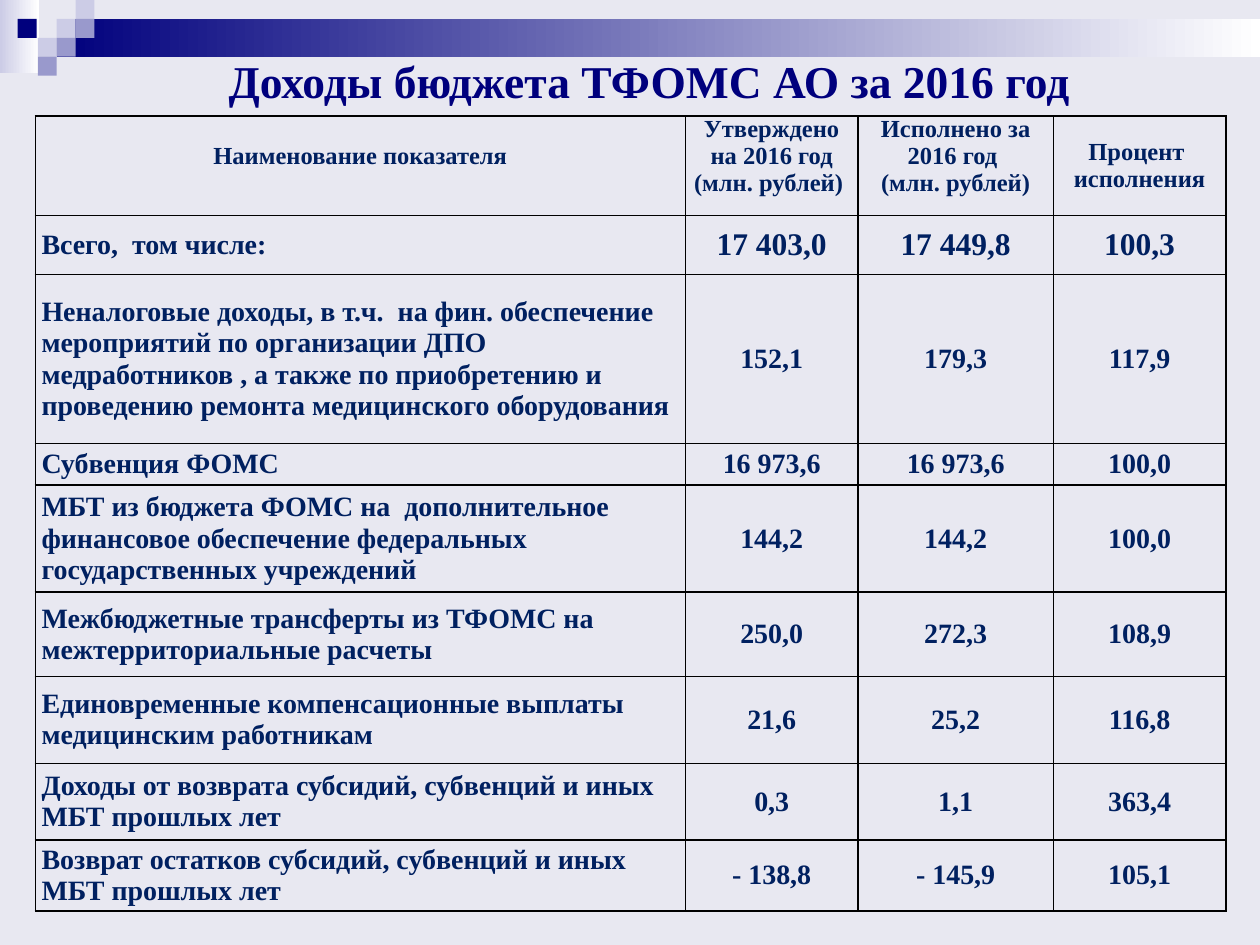
from lxml import etree
from pptx import Presentation
from pptx.dml.color import RGBColor
from pptx.enum.shapes import MSO_SHAPE
from pptx.enum.text import MSO_ANCHOR, PP_ALIGN
from pptx.oxml.ns import qn
from pptx.util import Inches, Pt

RECTANGLE = MSO_SHAPE.RECTANGLE
LEFT, CENTER = PP_ALIGN.LEFT, PP_ALIGN.CENTER
TOP, MIDDLE = MSO_ANCHOR.TOP, MSO_ANCHOR.MIDDLE

BACKGROUND = RGBColor(0xE8, 0xE8, 0xF1)
NAVY = RGBColor(0x00, 0x00, 0x7D)
LAVENDER = RGBColor(0xCC, 0xCC, 0xE6)
VIOLET = RGBColor(0x99, 0x99, 0xCC)
WHITE = RGBColor(0xFF, 0xFF, 0xFF)
TABLE_TEXT = RGBColor(0x00, 0x20, 0x60)
FONT = "Times New Roman"

SQUARE = 0.15
SQUARES = [
    (0.45, 0.15, LAVENDER), (0.6, 0, LAVENDER), (0.6, 0.15, VIOLET),
    (0.3, 0.3, LAVENDER), (0.14, 0.15, NAVY), (0.45, 0.3, VIOLET),
    (0.3, 0.45, VIOLET),
]

COLUMN_WIDTHS = [5.16, 1.37, 1.55, 1.37]
ROW_HEIGHTS = [0.79, 0.47, 1.34, 0.33, 0.85, 0.67, 0.69, 0.61, 0.56]
# Each header: its lines, vertical anchor and top margin
HEADERS = [
    (["Наименование показателя"], TOP, 0.21),
    (["Утверждено", "на 2016 год", "(млн. рублей) "], TOP, 0),
    (["Исполнено за 2016 год ", "(млн. рублей)"], TOP, 0),
    (["Процент ", "исполнения"], MIDDLE, 0),
]
INCOME_ROWS = [
    ("Всего,  том числе: ", "17 403,0", "17 449,8", "100,3"),
    ("Неналоговые доходы, в т.ч.  на фин. обеспечение мероприятий по "
     "организации ДПО  медработников , а также по приобретению и "
     "проведению ремонта медицинского оборудования",
     "152,1", "179,3", "117,9"),
    ("Субвенция ФОМС", "16 973,6", "16 973,6", "100,0"),
    ("МБТ из бюджета ФОМС на  дополнительное финансовое обеспечение "
     "федеральных государственных учреждений", "144,2", "144,2", "100,0"),
    ("Межбюджетные трансферты из ТФОМС на межтерриториальные расчеты",
     "250,0", "272,3", "108,9"),
    ("Единовременные компенсационные выплаты медицинским работникам",
     "21,6", "25,2", "116,8"),
    ("Доходы от возврата субсидий, субвенций и иных МБТ прошлых лет",
     "0,3", "1,1", "363,4"),
    ("Возврат остатков субсидий, субвенций и иных МБТ прошлых лет",
     "- 138,8", "- 145,9", "105,1"),
]


def add_block(slide, left, top, width, height, color, end_color=None):
    """Add a borderless rectangle, fading to end_color if one is given."""
    block = slide.shapes.add_shape(
        RECTANGLE, Inches(left), Inches(top), Inches(width), Inches(height))
    block.shadow.inherit = False
    block.line.fill.background()
    if end_color is None:
        block.fill.solid()
        block.fill.fore_color.rgb = color
    else:
        block.fill.gradient()
        block.fill.gradient_angle = 0
        for stop, stop_color in zip(block.fill.gradient_stops, (color, end_color)):
            stop.color.rgb = stop_color


def write_lines(frame, lines, size, color, align):
    for index, line in enumerate(lines):
        para = frame.paragraphs[0] if index == 0 else frame.add_paragraph()
        para.alignment = align
        span = para.add_run()
        span.text = line
        span.font.name = FONT
        span.font.size = Pt(size)
        span.font.bold = True
        span.font.color.rgb = color


def add_title(slide, text):
    box = slide.shapes.add_textbox(
        Inches(0.67), Inches(0.36), Inches(9.06), Inches(0.55))
    frame = box.text_frame
    frame.word_wrap = True
    frame.vertical_anchor = MIDDLE
    write_lines(frame, [text], 26, NAVY, CENTER)


def add_borders(cell):
    properties = cell._tc.get_or_add_tcPr()
    for index, side in enumerate(("a:lnL", "a:lnR", "a:lnT", "a:lnB")):
        line = etree.Element(qn(side), w=str(Pt(1)))
        fill = etree.SubElement(line, qn("a:solidFill"))
        etree.SubElement(fill, qn("a:srgbClr"), val="000000")
        properties.insert(index, line)


def fill_cell(cell, lines, size, align=CENTER, anchor=MIDDLE, top=0):
    cell.margin_left = cell.margin_right = Inches(0.05)
    cell.margin_top, cell.margin_bottom = Inches(top), Inches(0)
    cell.vertical_anchor = anchor
    cell.fill.background()
    add_borders(cell)
    write_lines(cell.text_frame, lines, size, TABLE_TEXT, align)


def add_income_table(slide):
    table = slide.shapes.add_table(
        len(ROW_HEIGHTS), len(COLUMN_WIDTHS), Inches(0.28), Inches(0.92),
        Inches(sum(COLUMN_WIDTHS)), Inches(sum(ROW_HEIGHTS))).table
    for column, width in zip(table.columns, COLUMN_WIDTHS):
        column.width = Inches(width)
    for row, height in zip(table.rows, ROW_HEIGHTS):
        row.height = Inches(height)

    for column, (lines, anchor, top) in enumerate(HEADERS):
        fill_cell(table.cell(0, column), lines, 14, anchor=anchor, top=top)
    for row, (label, *values) in enumerate(INCOME_ROWS, start=1):
        fill_cell(table.cell(row, 0), [label], 16, LEFT)
        value_size = 18 if row == 1 else 16  # the total stands out
        for column, value in enumerate(values, start=1):
            fill_cell(table.cell(row, column), [value], value_size)


def main():
    deck = Presentation()
    deck.slide_width, deck.slide_height = Inches(10), Inches(7.5)
    slide = deck.slides.add_slide(deck.slide_layouts[6])
    slide.background.fill.solid()
    slide.background.fill.fore_color.rgb = BACKGROUND

    # Header band and squares
    add_block(slide, 0, 0, 0.31, 0.58, LAVENDER, WHITE)
    add_block(slide, 0.45, 0.15, 9.55, 0.3, NAVY, WHITE)
    for left, top, color in SQUARES:
        add_block(slide, left, top, SQUARE, SQUARE, color)

    # Title and table
    add_title(slide, "Доходы бюджета ТФОМС АО за 2016 год ")
    add_income_table(slide)
    deck.save("out.pptx")


if __name__ == "__main__":
    main()
